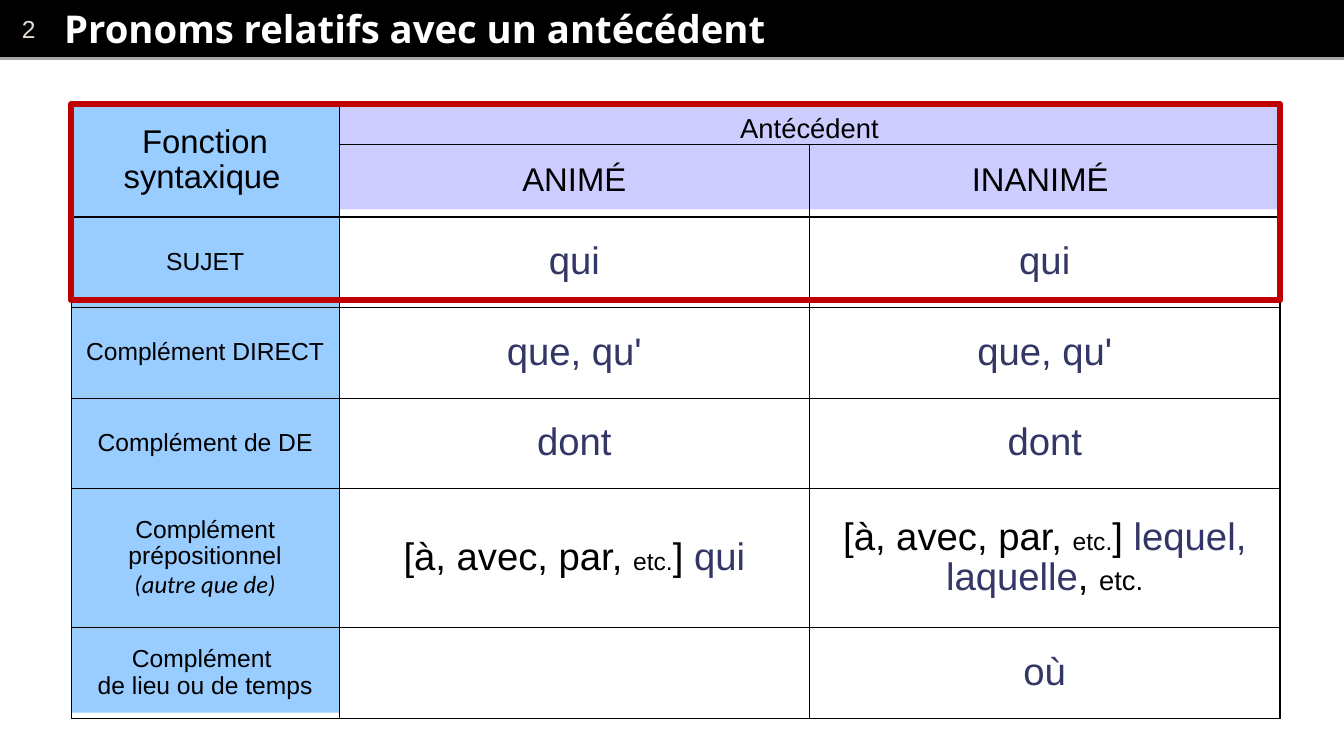
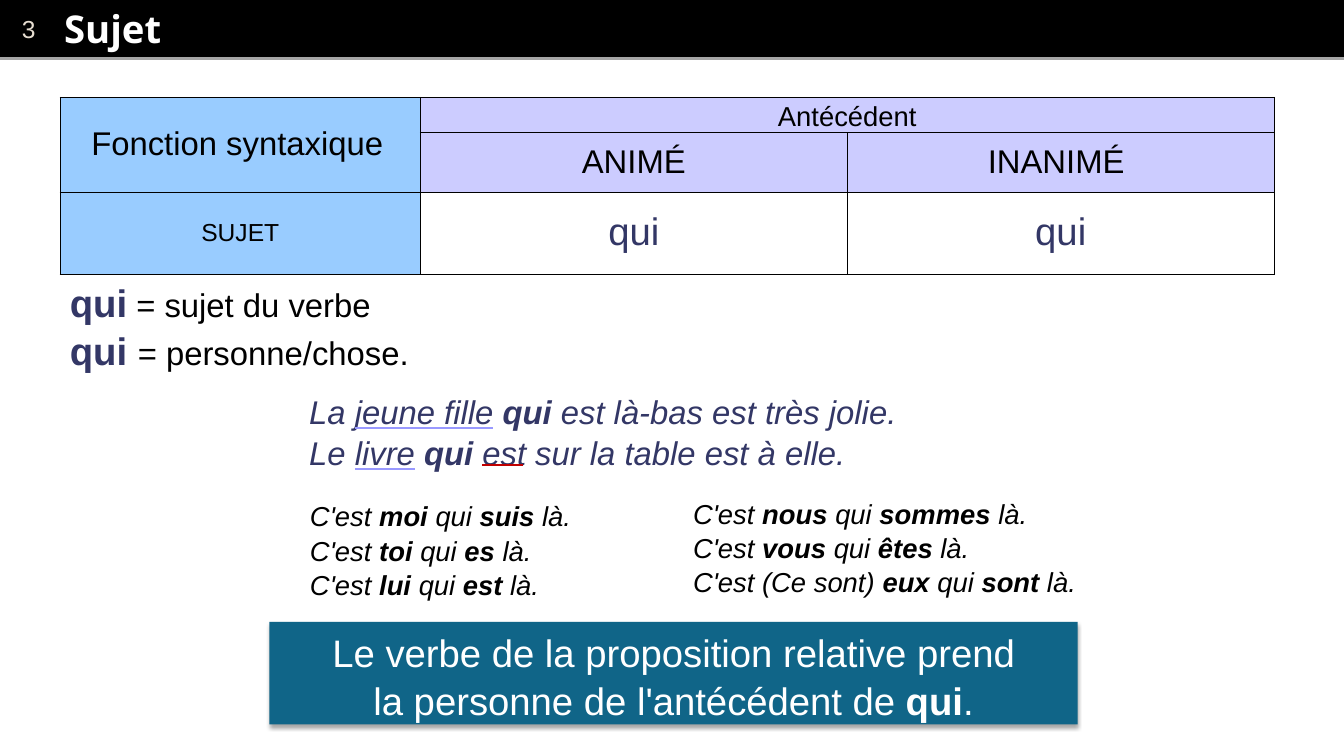
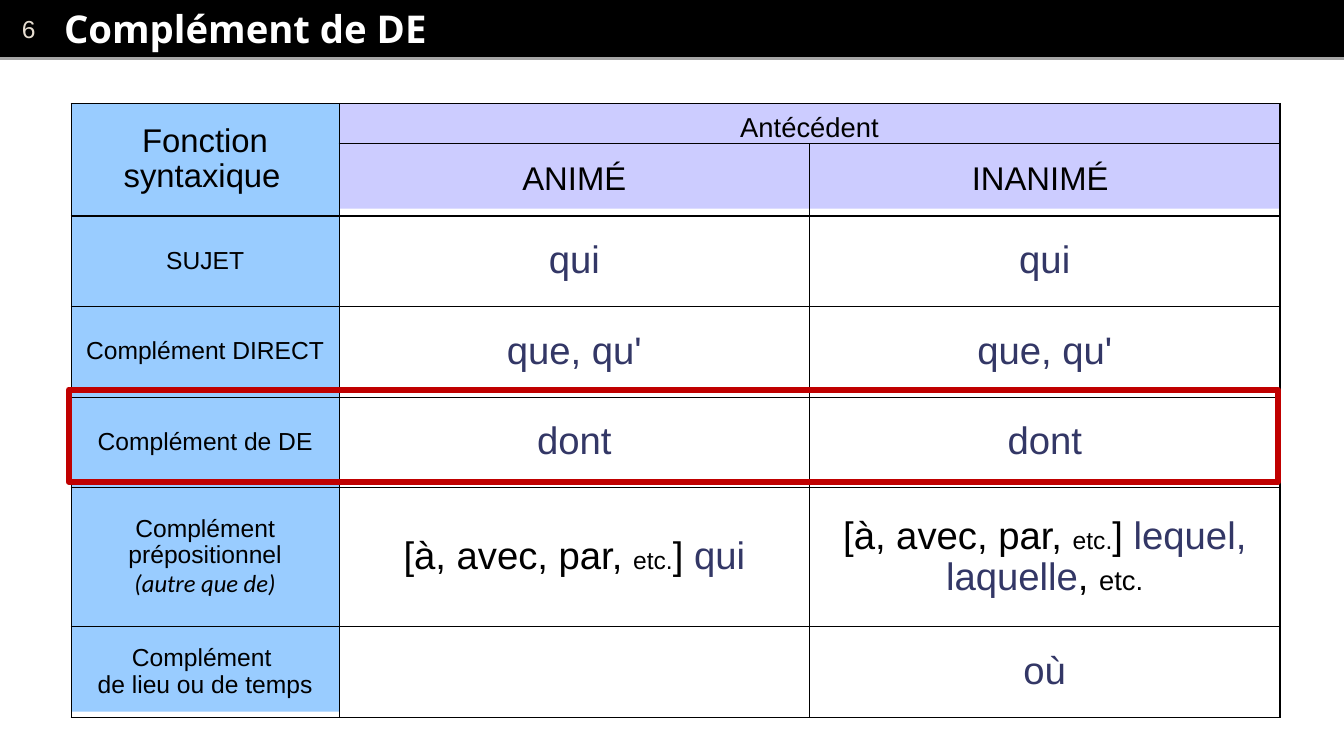
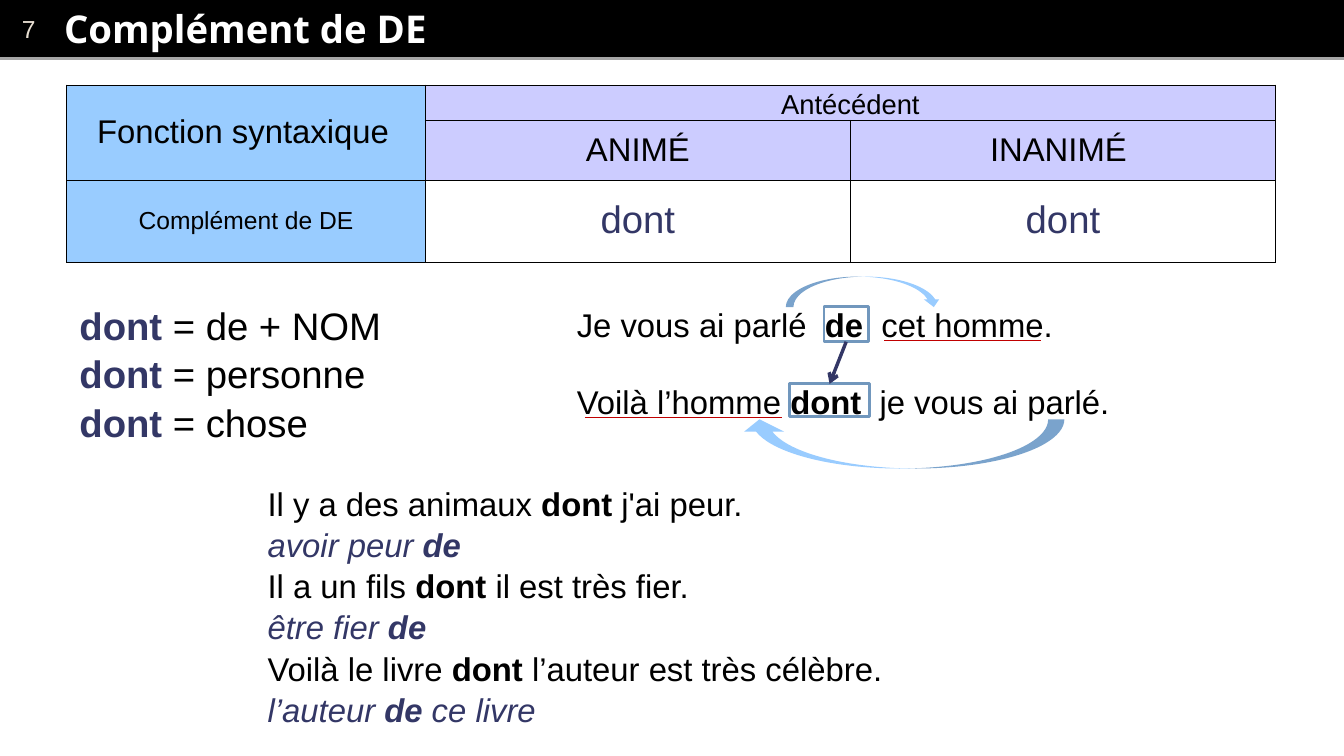
from lxml.etree import SubElement
from pptx import Presentation
from pptx.dml.color import RGBColor
from pptx.enum.shapes import MSO_CONNECTOR, MSO_SHAPE
from pptx.enum.text import MSO_ANCHOR, MSO_AUTO_SIZE, PP_ALIGN
from pptx.oxml.ns import qn
from pptx.util import Pt

COLORS = {
    "black": "000000", "white": "FFFFFF", "navy": "333766", "sky": "99CCFF",
    "lilac": "CCCCFF", "violet": "9999FF", "red": "C00000", "steel": "7197BD",
    "teal": "106588", "gray": "A6A6A6", "sand": "E7DED1",
}
WIDTH, HEIGHT = 982.8, 553
BASE = {"name": "Arial", "size": 24, "bold": False, "italic": False, "color": "black"}
B = {"bold": True}
U = {"underline": True}
BLACK = {"color": "black"}
NAVY = {"color": "navy"}
KEY = {"color": "navy", "bold": True, "size": 28}
VERB = {"color": "navy", "italic": True}
VERB_B = VERB | B
ETC = {"color": "black", "size": 18}

PREPOSITIONS = [("[à, avec, par, ", BLACK), ("etc.", ETC), ("] ", BLACK)]
SUBJECT = (["SUJET"], ["qui"], ["qui"])
OF_DE = (["Complément de DE"], ["dont"], ["dont"])
FUNCTIONS = [
    SUBJECT,
    (["Complément DIRECT"], ["que, qu'"], ["que, qu'"]),
    OF_DE,
    (["Complément prépositionnel\n", ("(autre que de)", {"name": "Calibri", "italic": True})],
     PREPOSITIONS + ["qui"],
     PREPOSITIONS + ["lequel, laquelle", (", ", BLACK), ("etc.", ETC | {"size": 20})]),
    (["Complément \nde lieu ou de temps"], [], ["où"]),
]


def rgb(name):
    return RGBColor.from_string(COLORS[name])


class Deck:
    """Holds the shared style and the slide being filled."""

    def __init__(self):
        self.prs = Presentation()
        self.prs.slide_width, self.prs.slide_height = Pt(WIDTH), Pt(HEIGHT)
        self.s = None

    def slide(self, number, title):
        self.s = self.prs.slides.add_slide(self.prs.slide_layouts[5])
        band = self.rect(0, 0, WIDTH, 42, "black", "black", 0.75)
        self.fill_text(band.text_frame, [[str(number)]], {"size": 18, "color": "sand"},
                       anchor=MSO_ANCHOR.MIDDLE, margins=(16, 3.6))
        self.line(0, 43, WIDTH, 43, "gray", 2)
        sp = self.s.shapes.title
        sp.left, sp.top, sp.width, sp.height = Pt(44), Pt(0.7), Pt(925), Pt(40.3)
        self.fill_text(sp.text_frame, [[title]],
                       {"name": "Open Sans", "size": 28, "bold": True, "color": "white"},
                       anchor=MSO_ANCHOR.MIDDLE, margins=(2.9, 2.9))
        self.s.shapes._spTree.append(sp._element)

    def run(self, p, text, fmt):
        fmt = BASE | fmt
        for i, part in enumerate(text.split("\n")):
            if i:
                p.add_line_break()
            if not part:
                continue
            r = p.add_run()
            r.text = part
            r.font.color.rgb = rgb(fmt["color"])
            for key, value in fmt.items():
                if key != "color":
                    setattr(r.font, key, Pt(value) if key == "size" else value)
            if fmt.get("underline"):
                r_pr = r._r.get_or_add_rPr()
                u_fill = SubElement(r_pr, qn("a:uFill"))
                solid = SubElement(u_fill, qn("a:solidFill"))
                SubElement(solid, qn("a:srgbClr"), val=COLORS["violet"])
                r_pr.find(qn("a:latin")).addprevious(u_fill)

    def paragraph(self, p, pieces, fmt, align, spacing):
        p.alignment, p.line_spacing = align, spacing
        for piece in pieces:
            text, extra = (piece, {}) if isinstance(piece, str) else piece
            self.run(p, text, fmt | extra)

    def fill_text(self, tf, paras, fmt, align=PP_ALIGN.LEFT, spacing=1.0,
                  anchor=MSO_ANCHOR.TOP, margins=(7.2, 3.6)):
        settings = {
            "word_wrap": True, "auto_size": MSO_AUTO_SIZE.NONE, "vertical_anchor": anchor,
            "margin_left": Pt(margins[0]), "margin_right": Pt(margins[0]),
            "margin_top": Pt(margins[1]), "margin_bottom": Pt(margins[1]),
        }
        for key, value in settings.items():
            setattr(tf, key, value)
        for i, pieces in enumerate(paras):
            p = tf.add_paragraph() if i else tf.paragraphs[0]
            self.paragraph(p, pieces, fmt, align, spacing)

    def text(self, x, y, w, h, paras, **fmt):
        sp = self.s.shapes.add_textbox(Pt(x), Pt(y), Pt(w), Pt(h))
        self.fill_text(sp.text_frame, paras, fmt, spacing=1.05)

    def rect(self, x, y, w, h, fill=None, line=None, weight=1, kind=MSO_SHAPE.RECTANGLE):
        sp = self.s.shapes.add_shape(kind, Pt(x), Pt(y), Pt(w), Pt(h))
        sp.shadow.inherit = False
        if fill:
            sp.fill.solid()
            sp.fill.fore_color.rgb = rgb(fill)
        else:
            sp.fill.background()
        if line:
            sp.line.color.rgb = rgb(line)
            sp.line.width = Pt(weight)
        else:
            sp.line.fill.background()
        return sp

    def callout(self, x, y, w, h, paras):
        sp = self.rect(x, y, w, h, "teal")
        effects = sp._element.spPr.find(qn("a:effectLst"))
        shadow = SubElement(effects, qn("a:outerShdw"), blurRad=str(Pt(3.1)),
                            dist=str(Pt(1.8)), dir="5400000", rotWithShape="0")
        clr = SubElement(shadow, qn("a:srgbClr"), val=COLORS["black"])
        SubElement(clr, qn("a:alpha"), val="35000")
        self.fill_text(sp.text_frame, paras, {"size": 28, "color": "white"},
                       PP_ALIGN.CENTER, 1.05)

    def curved_arrow(self, x, y, w, h, rotation=0, adjustments=()):
        sp = self.rect(x, y, w, h, "sky", kind=MSO_SHAPE.CURVED_DOWN_ARROW)
        sp.rotation = rotation
        for i, value in enumerate(adjustments):
            sp.adjustments[i] = value

    def line(self, x1, y1, x2, y2, color, weight):
        cxn = self.s.shapes.add_connector(MSO_CONNECTOR.STRAIGHT, Pt(x1), Pt(y1), Pt(x2), Pt(y2))
        cxn.line.color.rgb = rgb(color)
        cxn.line.width = Pt(weight)
        SubElement(cxn._element.spPr, qn("a:effectLst"))
        return cxn

    def arrow(self, start, end, color, weight):
        cxn = self.line(0, 0, 0, 0, color, weight)
        cxn.begin_connect(start, 2)
        cxn.end_connect(end, 0)
        SubElement(cxn._element.spPr.find(qn("a:ln")), qn("a:tailEnd"), type="arrow")

    def cell(self, cell, fill):
        tc_pr = cell._tc.get_or_add_tcPr()
        for side in "LRTB":
            ln = SubElement(tc_pr, qn(f"a:ln{side}"), w=str(Pt(1)))
            solid = SubElement(ln, qn("a:solidFill"))
            SubElement(solid, qn("a:srgbClr"), val=COLORS["black"])
        if fill:
            cell.fill.solid()
            cell.fill.fore_color.rgb = rgb(fill)
        else:
            cell.fill.background()
        cell.vertical_anchor = MSO_ANCHOR.MIDDLE
        cell.margin_left = cell.margin_right = Pt(1.4)
        cell.margin_top = cell.margin_bottom = 0

    def table(self, x, y, cols, rows, body, filled):
        tbl = self.s.shapes.add_table(len(rows), len(cols), Pt(x), Pt(y),
                                      Pt(sum(cols)), Pt(sum(rows))).table
        tbl.first_row = tbl.horz_banding = False
        for col, w in zip(tbl.columns, cols):
            col.width = Pt(w)
        for row, h in zip(tbl.rows, rows):
            row.height = Pt(h)
        content = [
            (["Fonction syntaxique", (" ", {"size": 16})], [("Antécédent", {"size": 20})], []),
            ([], ["ANIMÉ"], ["INANIMÉ "]),
        ] + body
        for i, row in enumerate(content):
            for j, pieces in enumerate(row):
                cell = tbl.cell(i, j)
                fill = "sky" if j == 0 else "lilac" if i < 2 else None
                self.cell(cell, fill if filled else None)
                fmt = {} if i < 2 else {"size": 18} if j == 0 else NAVY | {"size": 28}
                self.paragraph(cell.text_frame.paragraphs[0], pieces, fmt, PP_ALIGN.CENTER, 0.96)
        tbl.cell(0, 0).merge(tbl.cell(1, 0))
        tbl.cell(0, 1).merge(tbl.cell(0, 2))
        tbl.cell(0, 1).vertical_anchor = MSO_ANCHOR.BOTTOM

    def overview(self, y):
        x, cols = 52, (196, 344, 344)
        self.rect(x, y, cols[0], 445, "sky")
        self.rect(x + cols[0], y, sum(cols[1:]), 77, "lilac")
        rows = (29.5, 53, 66.3, 66.3, 66.3, 101.5, 66.3)
        self.table(x, y, cols, rows, FUNCTIONS, False)

    def summary(self, x, y, cols, function):
        self.table(x, y, cols, (25.8, 43.9, 59.9), [function], True)

    def highlight(self, x, y, w, h):
        self.rect(x, y, w, h, line="red", weight=4.5)


def agreement(pairs):
    return [[start, (who, B), " qui ", (verb, B), " là."] for start, who, verb in pairs]


def main():
    d = Deck()

    d.slide(2, "Pronoms relatifs avec un antécédent")
    d.overview(76.3)
    d.highlight(52, 76.3, 884, 143.3)

    d.slide(3, "Sujet")
    d.summary(44, 71.3, (263.4, 312.2, 312.2), SUBJECT)
    d.text(219, 281.5, 549, 65.5, [
        ["La ", ("jeune fille", U), " ", ("qui", B), " est là-bas est très jolie."],
        ["Le ", ("livre", U), " ", ("qui", B), " est sur la table est à elle."],
    ], **VERB)
    d.text(44, 198.7, 508, 75, [
        [("qui", KEY), " = sujet du verbe"],
        [("qui ", KEY), "= personne/chose."],
    ])
    d.text(219.6, 360.7, 264, 80, agreement([
        ("C'est ", "moi", "suis"), ("C'est ", "toi", "es"), ("C'est ", "lui", "est"),
    ]), size=20, italic=True)
    d.text(499.7, 358.6, 375, 80, agreement([
        ("C'est ", "nous", "sommes"), ("C'est ", "vous", "êtes"),
        ("C'est (Ce sont) ", "eux", "sont"),
    ]), size=20, italic=True)
    d.callout(197, 455, 591, 75, [
        ["Le verbe de la proposition relative prend\nla personne de l'antécédent de ",
         ("qui", B), "."],
    ])
    d.line(352.8, 340.3, 382.3, 340.3, "red", 1.5)

    d.slide(6, "Complément de DE")
    d.overview(75.6)
    d.highlight(50.4, 285, 884, 67.5)

    d.slide(7, "Complément de DE")
    d.summary(48.7, 62.4, (262.4, 310.8, 310.8), OF_DE)
    d.text(51, 216, 250, 109, [
        [("dont ", KEY), f"= {what}"] for what in ("de + NOM", "personne", "chose")
    ], size=28)
    dont_box = d.rect(577.5, 280.8, 58.3, 23.8, line="steel", weight=2)
    de_box = d.rect(602.6, 224, 32.4, 26, line="steel", weight=2)
    d.text(414.7, 218.2, 390, 36, [["Je vous ai parlé  ", ("de", B), "  cet homme."]])
    d.text(414.7, 274.3, 430, 36, [["Voilà l’homme ", ("dont ", B), " je vous ai parlé."]])
    d.line(646.5, 249.1, 761, 249.1, "red", 0.75)
    d.line(427.7, 305.3, 571.7, 305.3, "red", 0.75)
    d.arrow(de_box, dont_box, "navy", 2.5)
    d.curved_arrow(574.6, 202.3, 113.8, 22.3)
    d.curved_arrow(540.7, 306.7, 237.6, 36, 180, (0.329, 0.812, 0.25))
    d.text(188.6, 348.5, 558, 181.5, [
        ["Il y a des animaux ", ("dont", B), " j'ai peur.\n",
         ("avoir peur ", VERB), ("de", VERB_B)],
        ["Il a un fils ", ("dont ", B), "il est très fier.\n",
         ("être fier ", VERB), ("de", VERB_B)],
        ["Voilà le livre ", ("dont ", B), "l’auteur est très célèbre.\n",
         ("l’auteur ", VERB), ("de", VERB_B), (" ce livre", VERB)],
    ])

    d.prs.save("out.pptx")


if __name__ == "__main__":
    main()
